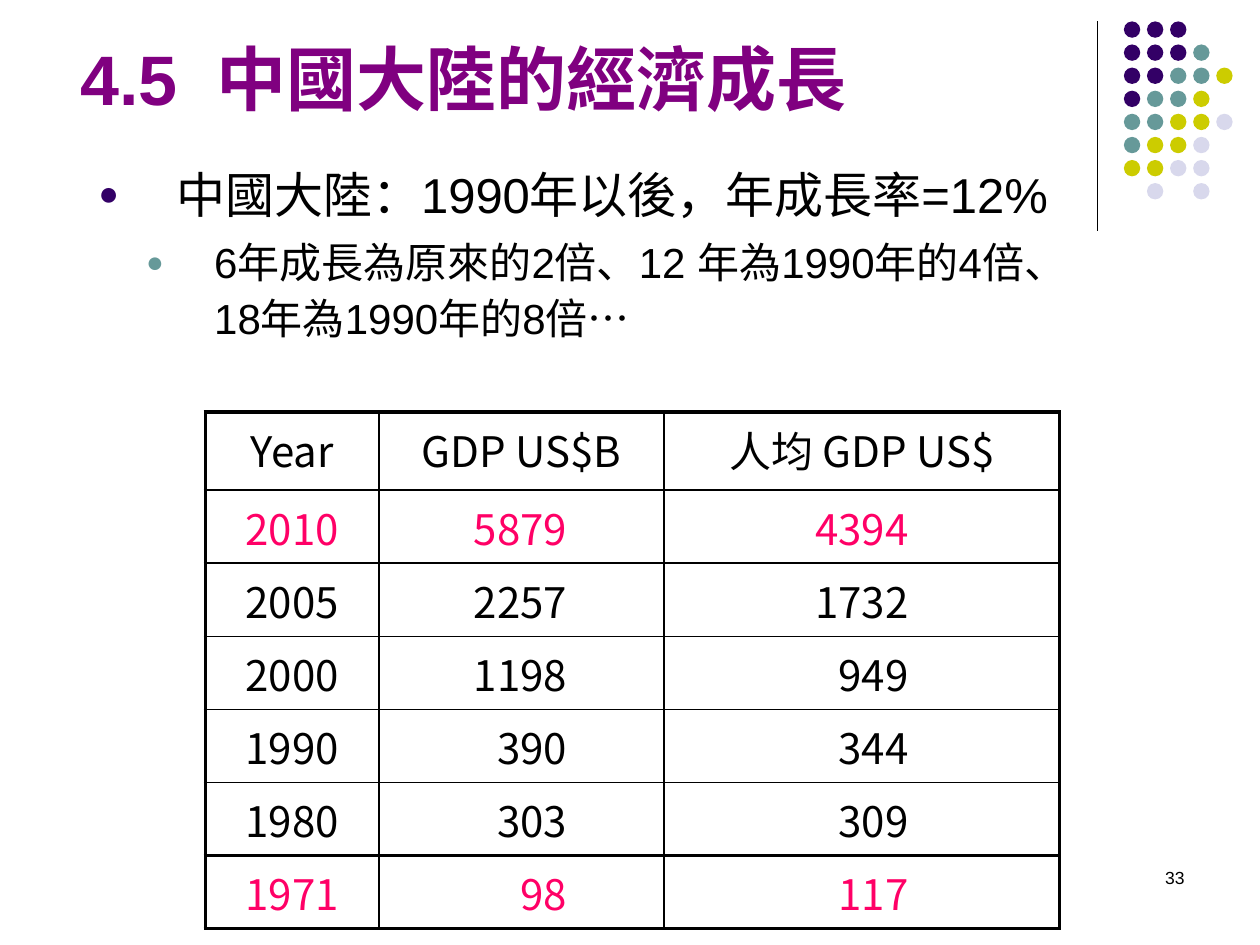
from lxml.etree import SubElement
from pptx import Presentation
from pptx.dml.color import RGBColor as RGB
from pptx.enum.shapes import MSO_CONNECTOR as Connector, MSO_SHAPE as Shape
from pptx.enum.text import MSO_ANCHOR as Anchor, MSO_AUTO_SIZE as AutoSize, PP_ALIGN as Align
from pptx.oxml.ns import qn
from pptx.util import Inches, Pt

THEME = {
    "latin": "Arial", "cjk": "Noto Sans CJK TC",
    "ink": "000000", "title": "800080", "accent": "FF0066",
    "dots": {"P": "330066", "T": "669999", "Y": "CCCC00", "L": "D8D8EC"},
    "title_size": 40, "point_size": 28, "detail_size": 24, "table_size": 24, "number_size": 10,
    "thin": 1, "thick": 2.25,
}


def write(paragraph, text, size, color="ink", face="latin", bold=False):
    run = paragraph.add_run()
    run.text = text
    formats = {"size": Pt(size), "name": THEME[face], "bold": bold}
    for attribute, value in formats.items():
        setattr(run.font, attribute, value)
    run.font.color.rgb = RGB.from_string(THEME[color])
    SubElement(run.font._element, qn("a:ea"), typeface=THEME["cjk"])


def place(box, left, top, width, height):
    bounds = {"left": left, "top": top, "width": width, "height": height}
    for attribute, value in bounds.items():
        setattr(box, attribute, Inches(value))


deck = Presentation()
deck.slide_width, deck.slide_height = Inches(10), Inches(7.5)
slide = deck.slides.add_slide(deck.slide_layouts[1])

divider = slide.shapes.add_connector(
    Connector.STRAIGHT, Inches(8.71), Inches(0.17), Inches(8.71), Inches(1.83))
divider.line.color.rgb = RGB.from_string(THEME["ink"])
divider.line.width = Pt(0.75)
SubElement(divider._element.spPr, qn("a:effectLst"))

dot_rows = ["PPP", "PPPT", "PPTTY", "PTTY", "TTYYL", "TYYL", "YYLL", " L L"]
dot_pitch = 0.55 / 3
dot_pattern = slide.shapes.add_group_shape()
for row, codes in enumerate(dot_rows):
    for column, code in enumerate(codes):
        if code == " ":
            continue
        dot = dot_pattern.shapes.add_shape(
            Shape.OVAL, Inches(8.92 + column * dot_pitch), Inches(0.17 + row * dot_pitch),
            Inches(0.13), Inches(0.13))
        dot.shadow.inherit = False
        dot.fill.solid()
        dot.fill.fore_color.rgb = RGB.from_string(THEME["dots"][code])
        dot.line.fill.background()

page_number = slide.shapes.add_textbox(0, 0, 0, 0)
place(page_number, 7.17, 6.83, 2.33, 0.5)
page_number.text_frame.word_wrap = True
number_line = page_number.text_frame.paragraphs[0]
number_line.alignment = Align.RIGHT
write(number_line, "33", THEME["number_size"])

heading = slide.shapes.title
place(heading, 0.54, 0.21, 8.19, 0.79)
heading.text_frame.auto_size = AutoSize.NONE
heading.text_frame.vertical_anchor = Anchor.BOTTOM
heading_line = heading.text_frame.paragraphs[0]
heading_line.alignment = Align.LEFT
write(heading_line, "4.5  中國大陸的經濟成長", THEME["title_size"], "title", bold=True)

growth = slide.placeholders[1]
place(growth, 0.68, 1.21, 8.07, 1.98)
growth.text_frame.auto_size = AutoSize.NONE
growth_points = [
    ("中國大陸：1990年以後，年成長率=12%", THEME["point_size"], "P", 0.62, -0.62),
    ("6年成長為原來的2倍、12 年為1990年的4倍、18年為1990年的8倍…",
     THEME["detail_size"], "T", 0.92, -0.54),
]
for level, (text, size, bullet, margin, indent) in enumerate(growth_points):
    point = growth.text_frame.add_paragraph() if level else growth.text_frame.paragraphs[0]
    formats = {"level": level, "line_spacing": 1.1, "space_before": Pt(size * 0.2)}
    for attribute, value in formats.items():
        setattr(point, attribute, value)
    properties = point._p.get_or_add_pPr()
    properties.set("marL", str(Inches(margin)))
    properties.set("indent", str(Inches(indent)))
    bullet_color = SubElement(properties, qn("a:buClr"))
    SubElement(bullet_color, qn("a:srgbClr"), val=THEME["dots"][bullet])
    SubElement(properties, qn("a:buSzPct"), val="70000")
    SubElement(properties, qn("a:buFont"), typeface=THEME["latin"])
    SubElement(properties, qn("a:buChar"), char="●")
    write(point, text, size)

records = [
    ("Year", "GDP US$B", "人均 GDP US$"),
    ("2010", "5879", "4394"),
    ("2005", "2257", "1732"),
    ("2000", "1198", "949"),
    ("1990", "390", "344"),
    ("1980", "303", "309"),
    ("1971", "98", "117"),
]
column_widths = [1.38, 2.26, 3.14]
figure_margins = [None, 0.77, 1.2]
highlighted = {"2010", "1971"}
last_row, last_column = len(records) - 1, len(column_widths) - 1
gdp = slide.shapes.add_table(
    len(records), len(column_widths), Inches(1.63), Inches(3.27), Inches(6.78), Inches(4.1)).table
gdp.first_row = gdp.horz_banding = False
for column, width in enumerate(column_widths):
    gdp.columns[column].width = Inches(width)

for row, record in enumerate(records):
    gdp.rows[row].height = Inches(0.58 if row else 0.62)
    for column, text in enumerate(record):
        cell = gdp.cell(row, column)
        entry = cell.text_frame.paragraphs[0]
        entry.alignment = Align.CENTER
        entry.space_before = Pt(THEME["table_size"] * 0.2)
        if row and column:
            entry.alignment = Align.RIGHT
            cell.margin_right = Inches(figure_margins[column])
        write(entry, text, THEME["table_size"],
              "accent" if record[0] in highlighted else "ink", "cjk")
        thick_sides = {
            "lnL": column == 0,
            "lnR": column == last_column,
            "lnT": row in (0, last_row),
            "lnB": row >= last_row - 1,
        }
        cell_properties = cell._tc.get_or_add_tcPr()
        for side, thick in thick_sides.items():
            weight = Pt(THEME["thick" if thick else "thin"])
            border = SubElement(cell_properties, qn(f"a:{side}"), w=str(weight))
            SubElement(SubElement(border, qn("a:solidFill")), qn("a:srgbClr"), val=THEME["ink"])
        cell.fill.background()

deck.save("out.pptx")
